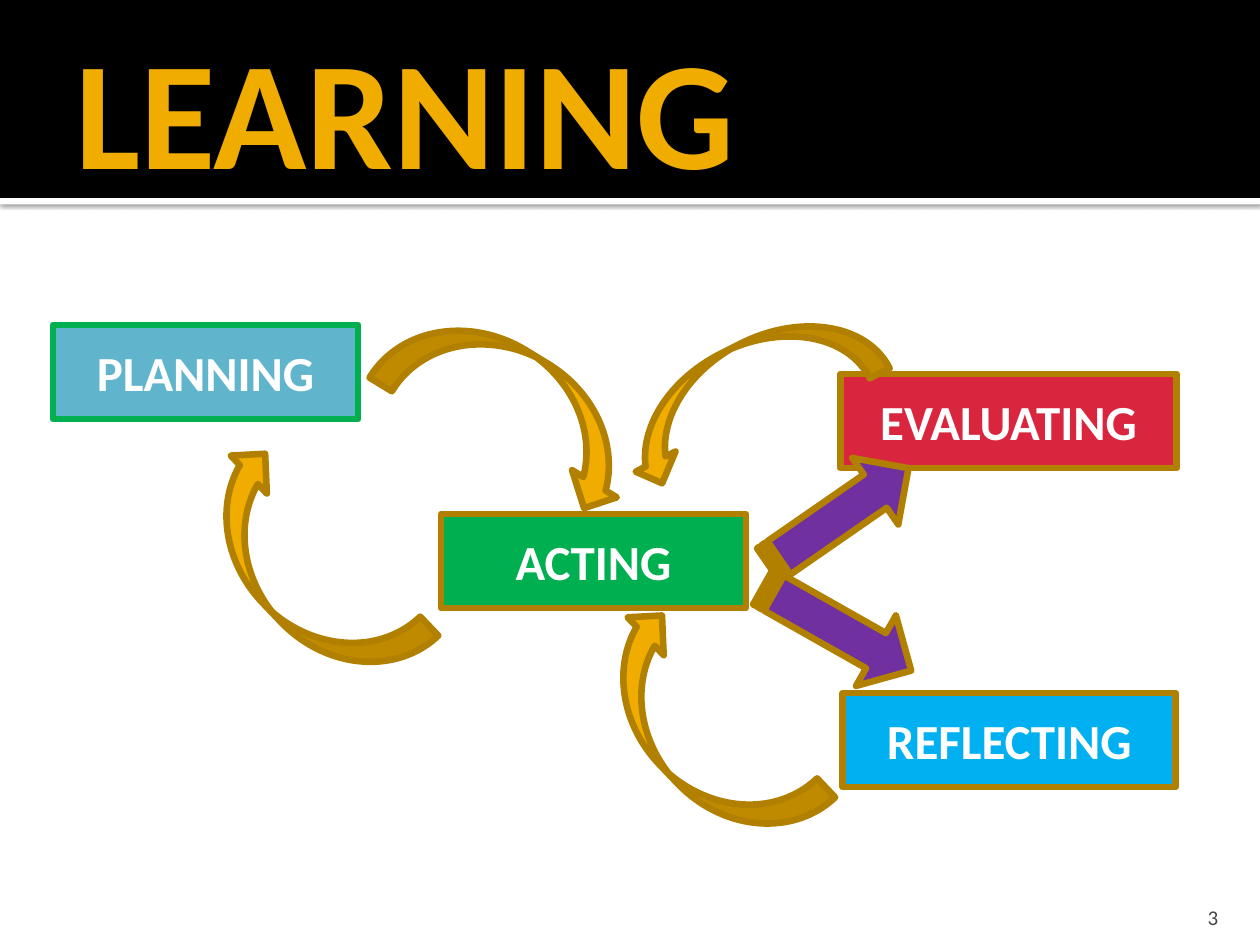
from lxml import etree
from pptx import Presentation
from pptx.dml.color import RGBColor
from pptx.enum.shapes import MSO_SHAPE
from pptx.enum.text import MSO_ANCHOR, MSO_AUTO_SIZE, PP_ALIGN
from pptx.oxml.ns import qn
from pptx.util import Cm, Pt

RECT = MSO_SHAPE.RECTANGLE
CURVED = MSO_SHAPE.CURVED_DOWN_ARROW
STRIPED = MSO_SHAPE.STRIPED_RIGHT_ARROW
MIDDLE, BOTTOM = MSO_ANCHOR.MIDDLE, MSO_ANCHOR.BOTTOM
LEFT, CENTER, RIGHT = PP_ALIGN.LEFT, PP_ALIGN.CENTER, PP_ALIGN.RIGHT
NO_FIT = MSO_AUTO_SIZE.NONE

COLORS = {
    "white": "FFFFFF", "black": "000000", "gold": "F0AD00", "bronze": "B28000",
    "gray": "454545", "teal": "60B5CC", "green": "00B050", "blue": "00B0F0",
    "red": "D9253E", "purple": "7030A0",
}


def color(name):
    return RGBColor.from_string(COLORS[name])


class Deck:
    font = "Calibri"
    line_width = Pt(3.78)

    def __init__(self, width, height):
        self.prs = Presentation()
        self.prs.slide_width, self.prs.slide_height = Cm(width), Cm(height)
        self.s = self.prs.slides.add_slide(self.prs.slide_layouts[5])

    def set_text(self, sp, text, size, fill, bold=True, align=CENTER, **frame):
        tf = sp.text_frame
        settings = {"word_wrap": True, "auto_size": NO_FIT, "vertical_anchor": MIDDLE}
        for name, value in (settings | frame).items():
            setattr(tf, name, value)
        p = tf.paragraphs[0]
        p.alignment = align
        r = p.add_run()
        r.text = text
        for name, value in {"name": self.font, "size": Pt(size), "bold": bold}.items():
            setattr(r.font, name, value)
        r.font.color.rgb = color(fill)

    def shape(self, kind, box, fill, line=None):
        sp = self.s.shapes.add_shape(kind, *map(Cm, box))
        sp.shadow.inherit = False
        sp.fill.solid()
        sp.fill.fore_color.rgb = color(fill)
        if line:
            sp.line.color.rgb = color(line)
            sp.line.width = self.line_width
        else:
            sp.line.fill.background()
        return sp

    def drop_shadow(self, sp):
        effects = sp._element.spPr.find(qn("a:effectLst"))
        shadow = etree.SubElement(effects, qn("a:outerShdw"), blurRad=str(Pt(2.5)),
                                  dist=str(Pt(0.8)), dir="5400000", rotWithShape="0")
        rgb = etree.SubElement(shadow, qn("a:srgbClr"), val=COLORS["black"])
        etree.SubElement(rgb, qn("a:alpha"), val="60000")

    def title(self, box, text):
        sp = self.s.shapes.title
        sp.left, sp.top, sp.width, sp.height = map(Cm, box)
        self.set_text(sp, text, 88, "gold", align=LEFT, margin_left=Cm(0.25),
                      margin_top=Cm(0.13), margin_right=Cm(0.13), margin_bottom=Cm(0.13))
        self.s.shapes._spTree.append(sp._element)  # bring in front of the bands

    def page_number(self, box, text):
        sp = self.s.shapes.add_textbox(*map(Cm, box))
        self.set_text(sp, text, 12, "gray", bold=False, align=RIGHT,
                      vertical_anchor=BOTTOM, margin_bottom=0)

    def step(self, box, text, fill, line="bronze"):
        self.set_text(self.shape(RECT, box, fill, line), text, 28, "white")

    def arrow(self, kind, box, angle, fill, flip=False):
        sp = self.shape(kind, box, fill, "bronze")
        sp.rotation = angle
        if flip:
            sp._element.spPr.xfrm.set("flipV", "1")


def main():
    deck = Deck(25.4, 19.05)

    # Header
    deck.drop_shadow(deck.shape(RECT, (0, 3.99, 25.4, 0.13), "white"))
    deck.shape(RECT, (0, 0, 25.4, 3.99), "black")
    deck.title((1.27, 0.43, 22.86, 3.48), "LEARNING")
    deck.page_number((22.78, 17.98, 2.03, 0.76), "3")

    # Steps of the cycle
    height = 1.9
    deck.step((1.07, 6.55, 6.15, height), "PLANNING", "teal", "green")
    deck.step((8.89, 10.36, 6.15, height), "ACTING", "green")
    deck.step((16.99, 13.97, 6.71, height), "REFLECTING", "blue")
    deck.step((16.94, 7.54, 6.78, height), "EVALUATING", "red")

    # Arrows between the steps
    curve, stripe = (5.59, 2.11), (3.43, 1.63)
    deck.arrow(CURVED, (7.59, 7.11, *curve), 31.3, "gold")
    deck.arrow(CURVED, (3.35, 10.46, *curve), 226.4, "gold")
    deck.arrow(STRIPED, (15.19, 9.6, *stripe), 325.3, "purple")
    deck.arrow(STRIPED, (15.16, 11.86, *stripe), 29.5, "purple")
    deck.arrow(CURVED, (11.35, 13.72, *curve), 226.4, "gold")
    deck.arrow(CURVED, (12.24, 6.98, 5.59, 1.8), 153.2, "gold", flip=True)

    deck.prs.save("out.pptx")


if __name__ == "__main__":
    main()
